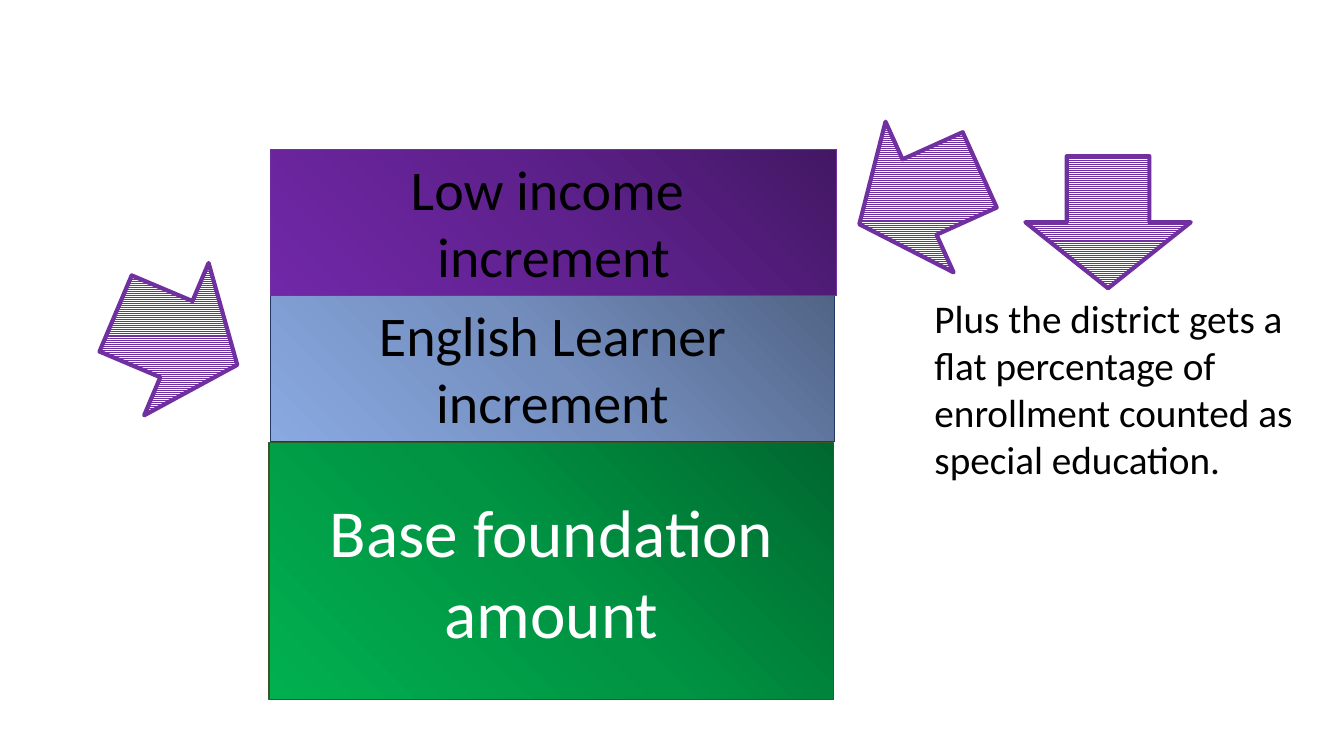
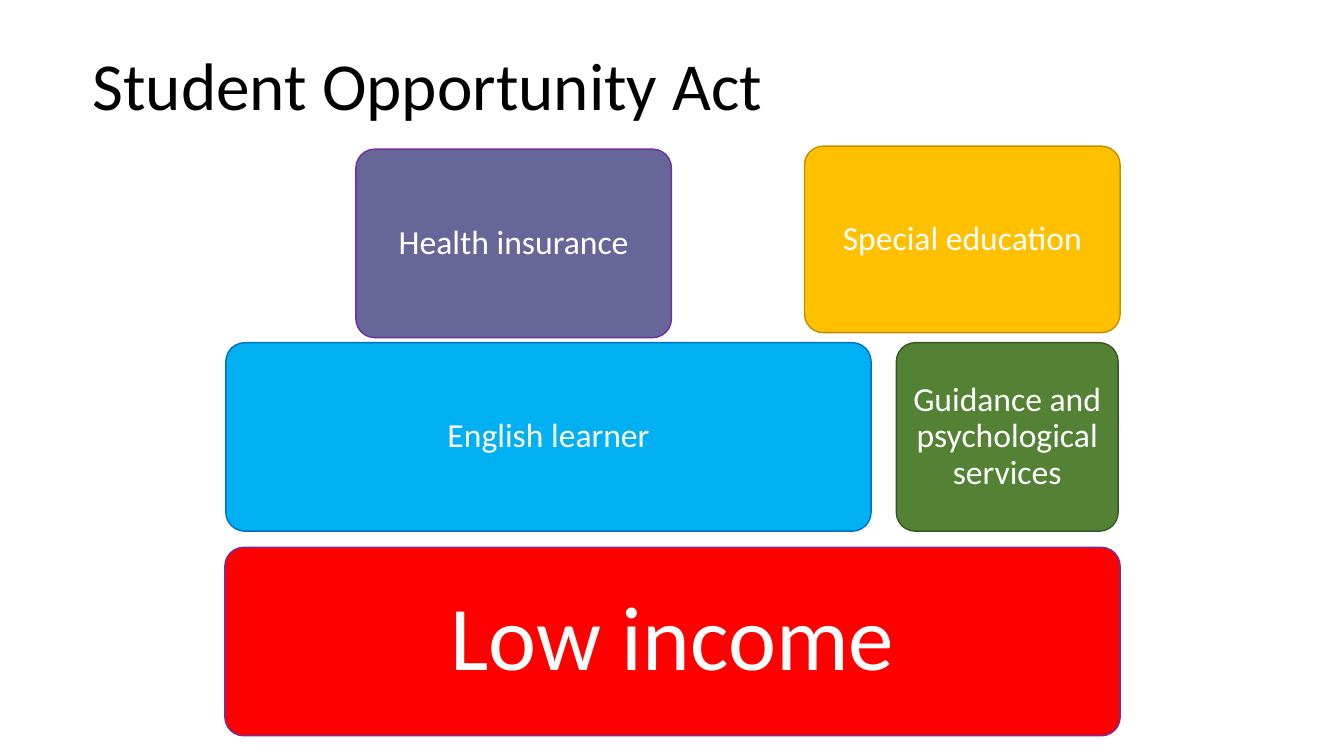
from copy import deepcopy

from pptx import Presentation
from pptx.dml.color import RGBColor
from pptx.enum.dml import MSO_PATTERN
from pptx.enum.shapes import MSO_SHAPE as SHAPE
from pptx.enum.text import MSO_ANCHOR as ANCHOR, PP_ALIGN as ALIGN
from pptx.util import Inches, Pt

FONT = "Calibri"
BLACK, WHITE, PURPLE = "000000", "FFFFFF", "7030A0"


def rgb(value):
    return RGBColor.from_string(value)


class Deck:
    """Holds the presentation, its style and the current slide."""

    def __init__(self):
        self.prs = Presentation()
        self.prs.slide_width = Inches(13.33)
        self.prs.slide_height = Inches(7.5)
        self.slide = None

    def new_slide(self):
        self.slide = self.prs.slides.add_slide(self.prs.slide_layouts[6])

    def set_text(self, s, text, size, color, align, anchor, inset=None, spacing=None):
        tf = s.text_frame
        tf.word_wrap = True
        tf.vertical_anchor = anchor
        if inset is not None:
            tf.margin_left = tf.margin_right = Inches(inset)
            tf.margin_top = tf.margin_bottom = Inches(inset)
        tf.text = text
        for p in tf.paragraphs:
            p.alignment = align
            p.line_spacing = spacing
            for r in p.runs:
                r.font.name = FONT
                r.font.size = Pt(size)
                r.font.color.rgb = rgb(color)

    def text(self, box, text, size):
        s = self.slide.shapes.add_textbox(*map(Inches, box))
        self.set_text(s, text, size, BLACK, ALIGN.LEFT, ANCHOR.TOP)

    def shape(self, kind, box, line, width):
        s = self.slide.shapes.add_shape(kind, *map(Inches, box))
        s.shadow.inherit = False
        s.line.color.rgb = rgb(line)
        s.line.width = Pt(width)
        return s

    def gradient_block(self, box, colors, line, width, text, size, color, anchor):
        s = self.shape(SHAPE.RECTANGLE, box, line, width)
        s.fill.gradient()
        s.fill.gradient_angle = 225
        # The default gradient has two stops; add a third
        stop_list = s._element.xpath(".//a:gsLst")[0]
        stop_list.append(deepcopy(stop_list[-1]))
        for stop, position, value in zip(s.fill.gradient_stops, (0, 0.5, 1), colors):
            stop.position = position
            stop.color.rgb = rgb(value)
        self.set_text(s, text, size, color, ALIGN.CENTER, anchor)

    def striped_arrow(self, left, top, rotation=0):
        s = self.shape(SHAPE.DOWN_ARROW, (left, top, 1.64, 1.31), PURPLE, 3)
        s.rotation = rotation
        s.fill.patterned()
        s.fill.pattern = MSO_PATTERN.LIGHT_HORIZONTAL
        s.fill.fore_color.rgb = rgb(PURPLE)
        s.fill.back_color.rgb = rgb(WHITE)

    def card(self, box, fill, line, text, size=24, inset=0.1):
        s = self.shape(SHAPE.ROUNDED_RECTANGLE, box, line, 1)
        s.adjustments[0] = 0.1
        s.fill.solid()
        s.fill.fore_color.rgb = rgb(fill)
        self.set_text(s, text, size, WHITE, ALIGN.CENTER, ANCHOR.MIDDLE, inset, 0.9)


def funding_formula(deck):
    deck.new_slide()
    # Stacked funding blocks
    deck.gradient_block((2.67, 4.39, 5.6, 2.55), ("00682F", "009443", "00B050"),
                        "385723", 1, "Base foundation amount", 48, WHITE, ANCHOR.MIDDLE)
    deck.gradient_block((2.68, 2.93, 5.6, 1.45), ("516486", "748EBE", "89A9E1"),
                        "203864", 0.75, "English Learner increment", 40, BLACK, ANCHOR.TOP)
    deck.gradient_block((2.68, 1.48, 5.62, 1.45), ("431764", "5F218E", "7128A8"),
                        PURPLE, 0.75, "Low income \nincrement", 40, BLACK, ANCHOR.TOP)
    # Special education note
    deck.text((9.17, 2.87, 4.06, 1.99),
              "Plus the district gets a flat percentage of enrollment "
              "counted as special education.", 28)
    # Arrows
    deck.striped_arrow(0.93, 2.71, 292.9)
    deck.striped_arrow(8.3, 1.3, 65.7)
    deck.striped_arrow(10.17, 1.55)


def opportunity_act(deck):
    deck.new_slide()
    deck.text((0.82, 0.38, 9.08, 0.91), "Student Opportunity Act", 48)
    # Bottom row
    deck.card((2.23, 5.43, 8.88, 1.87), "FF0000", PURPLE, "Low income", 65, 0.27)
    # Middle row
    deck.card((2.24, 3.4, 6.4, 1.87), "00B0F0", "0070C0", "English learner")
    deck.card((8.89, 3.4, 2.2, 1.87), "548235", "385723",
              "Guidance and psychological services")
    # Top row
    deck.card((3.53, 1.48, 3.13, 1.87), "666699", PURPLE, "Health insurance")
    deck.card((7.98, 1.45, 3.13, 1.85), "FFC000", "BF9000", "Special education")


def main():
    deck = Deck()
    funding_formula(deck)
    opportunity_act(deck)
    deck.prs.save("out.pptx")


if __name__ == "__main__":
    main()
